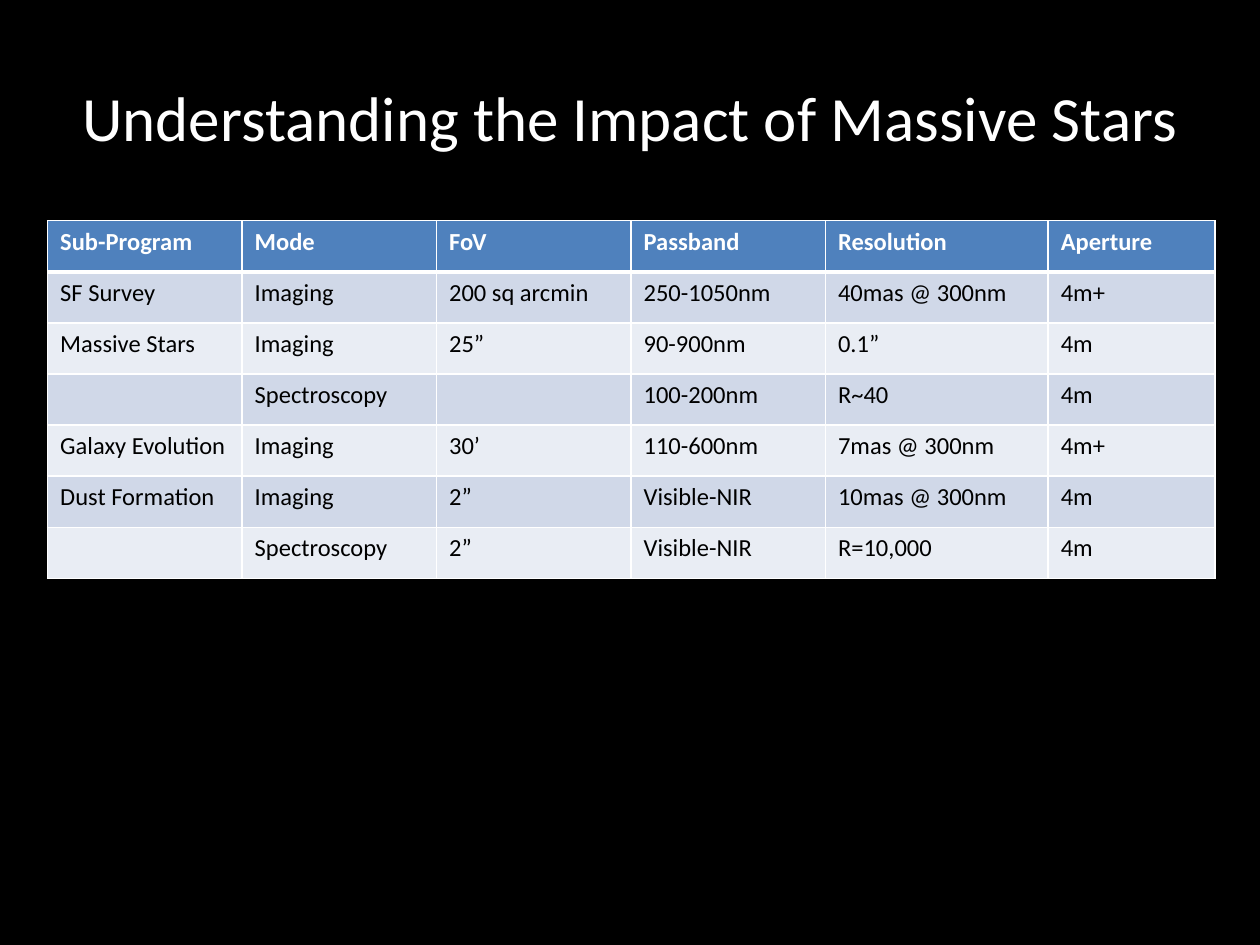
from lxml.etree import SubElement
from pptx import Presentation
from pptx.dml.color import RGBColor
from pptx.enum.text import MSO_ANCHOR as Anchor, PP_ALIGN as Align
from pptx.oxml.ns import qn
from pptx.util import Cm, Pt

FONT = "Calibri"
COLORS = {
    "background": "000000",
    "light": "FFFFFF",
    "dark": "000000",
    "header": "4F81BD",
    "odd_row": "D0D8E8",
    "even_row": "E9EDF4",
}
COLUMN_WIDTHS = [3.92, 3.92, 3.92, 3.92, 4.49, 3.36]
ROW_HEIGHT = 1.03
ROWS = [
    ["Sub-Program", "Mode", "FoV", "Passband", "Resolution", "Aperture"],
    ["SF Survey", "Imaging", "200 sq arcmin", "250-1050nm", "40mas @ 300nm", "4m+"],
    ["Massive Stars", "Imaging", "25”", "90-900nm", "0.1”", "4m"],
    ["", "Spectroscopy", "", "100-200nm", "R~40", "4m"],
    ["Galaxy Evolution", "Imaging", "30’", "110-600nm", "7mas @ 300nm", "4m+"],
    ["Dust Formation", "Imaging", "2”", "Visible-NIR", "10mas @ 300nm", "4m"],
    ["", "Spectroscopy", "2”", "Visible-NIR", "R=10,000", "4m"],
]


def color(name):
    return RGBColor.from_string(COLORS[name])


def format_runs(text_frame, size, color_name, bold=False):
    for paragraph in text_frame.paragraphs:
        for run in paragraph.runs:
            run.font.name = FONT
            run.font.size = Pt(size)
            run.font.bold = bold
            run.font.color.rgb = color(color_name)


def set_borders(cell, **widths):
    """Draw the left, right, top and bottom lines; call before filling the cell."""
    properties = cell._tc.get_or_add_tcPr()
    for side in ("L", "R", "T", "B"):
        line = SubElement(properties, qn(f"a:ln{side}"), w=str(Pt(widths.get(side, 1))))
        fill = SubElement(line, qn("a:solidFill"))
        SubElement(fill, qn("a:srgbClr"), val=COLORS["light"])


def add_title(slide, text):
    title = slide.shapes.title
    title.left, title.top = Cm(1.27), Cm(0.76)
    title.width, title.height = Cm(22.86), Cm(3.18)
    text_frame = title.text_frame
    text_frame.text = text
    text_frame.word_wrap = True
    text_frame.vertical_anchor = Anchor.MIDDLE
    text_frame.paragraphs[0].alignment = Align.CENTER
    format_runs(text_frame, 36, "light")


def format_cell(cell, row):
    # A thick rule separates the header from the body
    if row == 0:
        set_borders(cell, B=3)
        fill_name = "header"
    else:
        set_borders(cell, T=3 if row == 1 else 1)
        fill_name = "odd_row" if row % 2 else "even_row"
    cell.fill.solid()
    cell.fill.fore_color.rgb = color(fill_name)
    format_runs(cell.text_frame, 14, "dark" if row else "light", bold=row == 0)


def add_program_table(slide):
    table = slide.shapes.add_table(
        len(ROWS), len(COLUMN_WIDTHS), Cm(0.96), Cm(4.45),
        Cm(sum(COLUMN_WIDTHS)), Cm(ROW_HEIGHT * len(ROWS)),
    ).table
    for column, width in zip(table.columns, COLUMN_WIDTHS):
        column.width = Cm(width)
    for row, values in enumerate(ROWS):
        table.rows[row].height = Cm(ROW_HEIGHT)
        for column, value in enumerate(values):
            cell = table.cell(row, column)
            cell.text_frame.text = value
            format_cell(cell, row)


def main():
    presentation = Presentation()
    presentation.slide_width, presentation.slide_height = Cm(25.4), Cm(19.05)
    slide = presentation.slides.add_slide(presentation.slide_layouts[5])

    # Background
    slide.background.fill.solid()
    slide.background.fill.fore_color.rgb = color("background")

    # Content
    add_title(slide, "Understanding the Impact of Massive Stars")
    add_program_table(slide)
    presentation.save("out.pptx")


if __name__ == "__main__":
    main()
